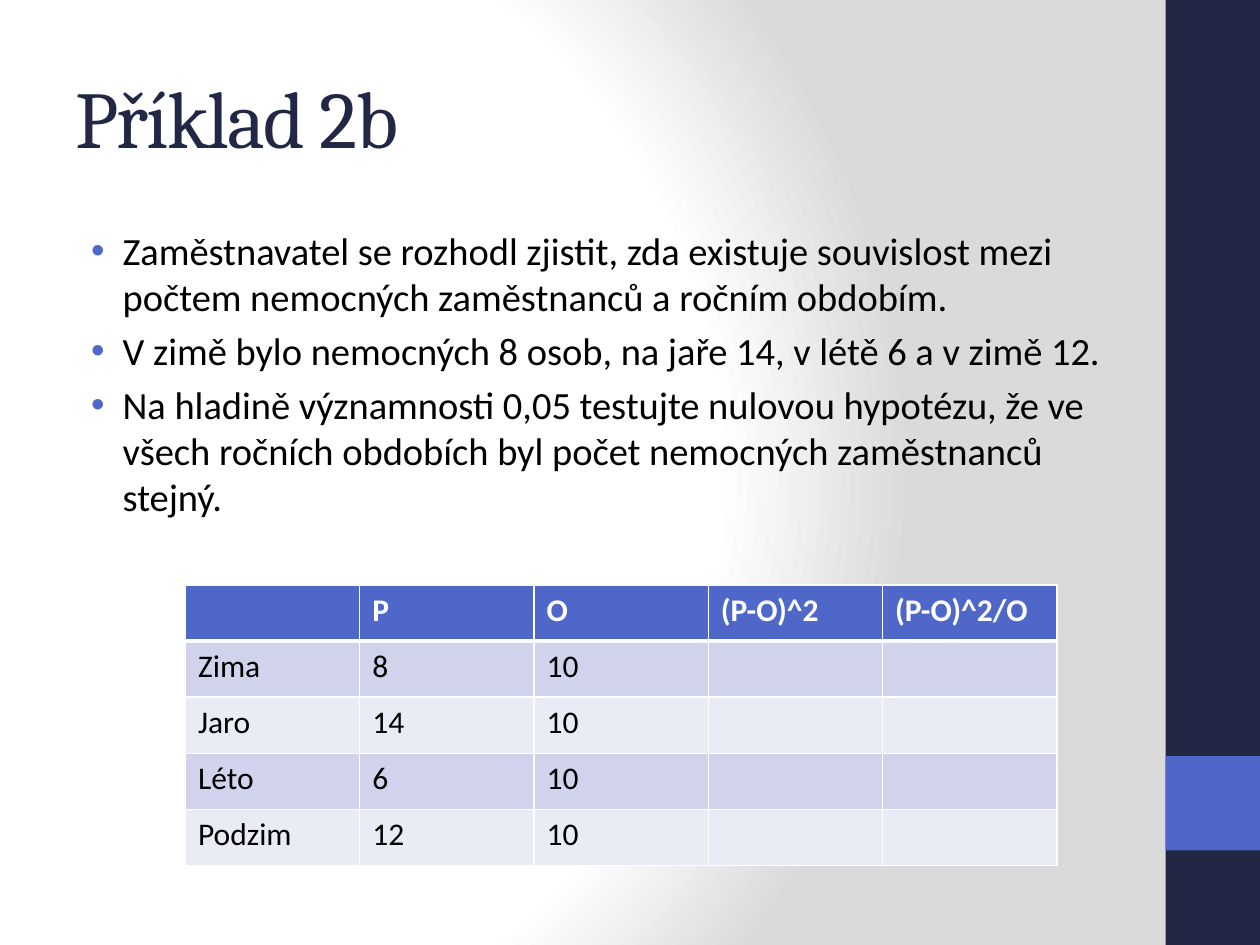
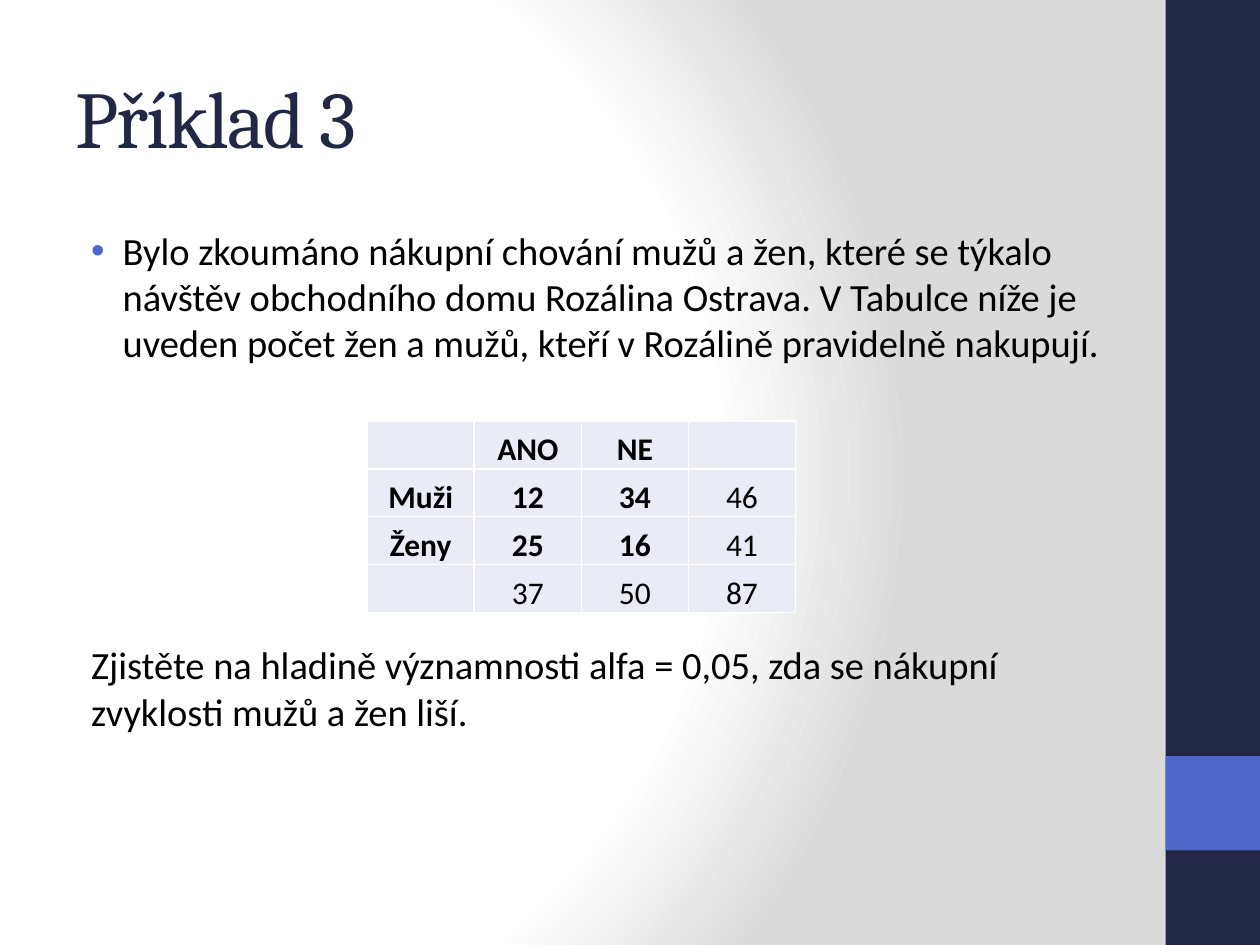
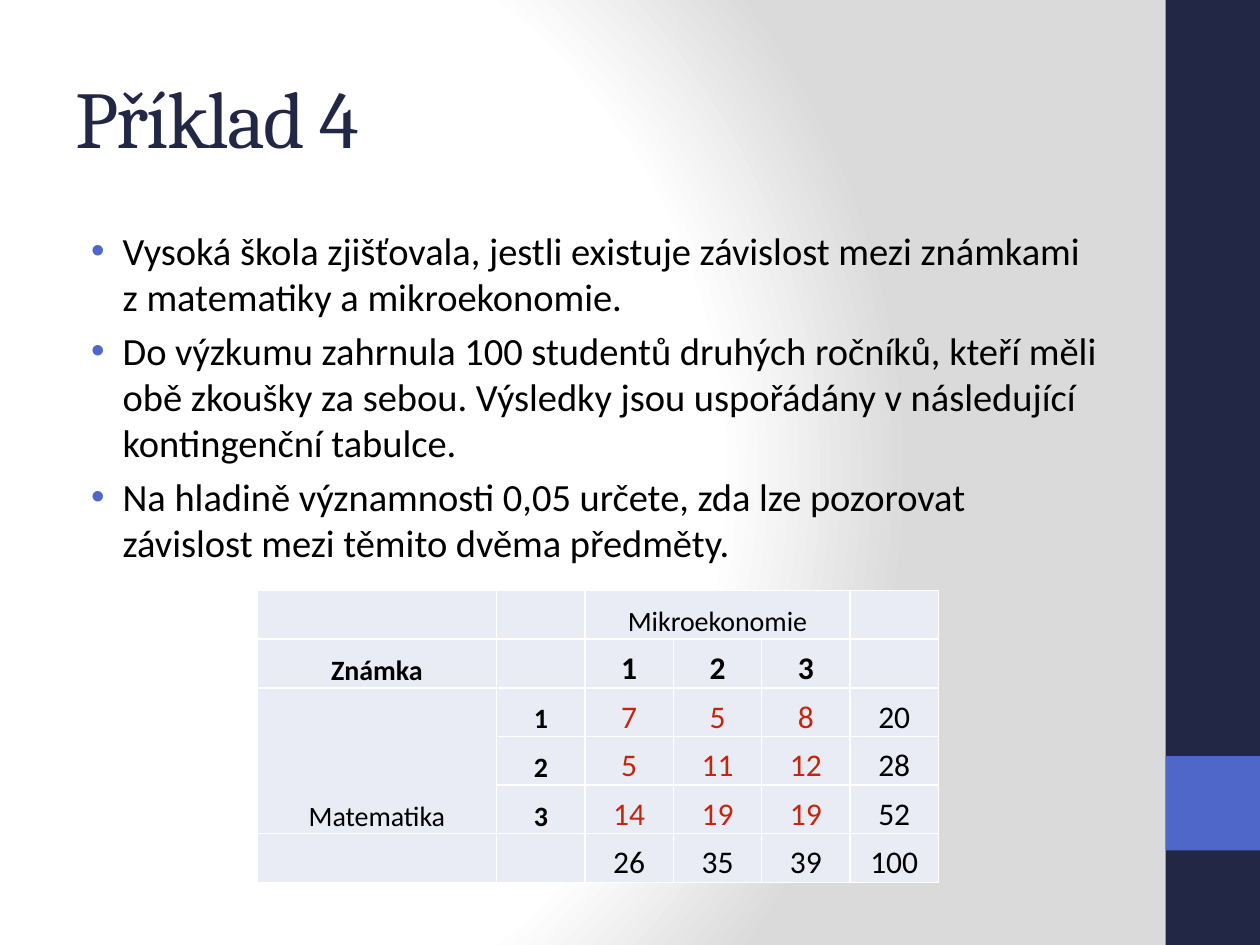
from dataclasses import dataclass

from pptx import Presentation
from pptx.dml.color import RGBColor
from pptx.enum.shapes import MSO_SHAPE
from pptx.enum.text import MSO_ANCHOR, PP_ALIGN
from pptx.oxml import parse_xml
from pptx.oxml.ns import nsdecls, qn
from pptx.util import Pt


@dataclass(frozen=True)
class Theme:
    navy: str = "212745"
    blue: str = "4E67C8"
    band: str = "D0D3EB"
    pale: str = "E9EBF5"
    grey: str = "DADADA"
    white: str = "FFFFFF"
    black: str = "000000"
    red: str = "C3260C"
    heading_font: str = "Cambria"
    body_font: str = "Calibri"
    title_size: float = 46
    body_size: float = 22
    cell_size: float = 18
    label_size: float = 16


THEME = Theme()


@dataclass(frozen=True)
class CellStyle:
    fill: str = THEME.pale
    color: str = THEME.black
    size: float = THEME.cell_size
    bold: bool = False
    compact: bool = True
    bottom_line: float = 1


def format_runs(p, font, size, color, bold=False):
    for r in p.runs:
        r.font.name = font
        r.font.size = Pt(size)
        r.font.bold = bold
        r.font.color.rgb = RGBColor.from_string(color)


def set_background(master):
    master.background.fill.solid()
    bg = master.element.find(".//" + qn("p:bgPr"))
    stops = [(0, THEME.white), (75, THEME.white), (100, THEME.grey)]
    gs = "".join(
        f'<a:gs pos="{pos * 1000}"><a:srgbClr val="{color}"/></a:gs>' for pos, color in stops
    )
    bg.replace(bg[0], parse_xml(
        f'<a:gradFill {nsdecls("a")} rotWithShape="1"><a:gsLst>{gs}</a:gsLst>'
        '<a:path path="circle">'
        '<a:fillToRect l="20000" t="50000" r="100000" b="50000"/>'
        '</a:path></a:gradFill>'
    ))


def add_band(slide, top, height, color):
    sp = slide.shapes.add_shape(MSO_SHAPE.RECTANGLE, Pt(666), Pt(top), Pt(54), Pt(height))
    sp.shadow.inherit = False
    sp.fill.solid()
    sp.fill.fore_color.rgb = RGBColor.from_string(color)
    sp.line.fill.background()


def add_text_frame(slide, top, height):
    tf = slide.shapes.add_textbox(Pt(36), Pt(top), Pt(600), Pt(height)).text_frame
    tf.word_wrap = True
    return tf


def add_slide(prs, title):
    slide = prs.slides.add_slide(prs.slide_layouts[6])
    add_band(slide, 0, 540, THEME.navy)
    add_band(slide, 432, 54, THEME.blue)
    tf = add_text_frame(slide, 21.6, 90)
    tf.vertical_anchor = MSO_ANCHOR.MIDDLE
    tf.text = title
    p = tf.paragraphs[0]
    format_runs(p, THEME.heading_font, THEME.title_size, THEME.navy)
    p.runs[0].font._element.set("spc", "-100")
    return slide


def set_indent(p, left, first=0):
    pPr = p._p.get_or_add_pPr()
    pPr.set("marL", str(Pt(left)))
    pPr.set("indent", str(Pt(first)))
    return pPr


def add_bullets(slide, texts):
    tf = add_text_frame(slide, 126, 378)
    for i, text in enumerate(texts):
        p = tf.add_paragraph() if i else tf.paragraphs[0]
        p.text = text
        pPr = set_indent(p, 27, -18)
        for xml in (
            f'<a:buClr {nsdecls("a")}><a:srgbClr val="{THEME.blue}"/></a:buClr>',
            f'<a:buFont {nsdecls("a")} typeface="Arial"/>',
            f'<a:buChar {nsdecls("a")} char="•"/>',
        ):
            pPr.append(parse_xml(xml))
        if i:
            p.space_before = Pt(THEME.body_size * 0.2)
        format_runs(p, THEME.body_font, THEME.body_size, THEME.black)


def add_closing(slide, top, text):
    tf = add_text_frame(slide, top, 72)
    tf.text = text
    p = tf.paragraphs[0]
    set_indent(p, 9)
    format_runs(p, THEME.body_font, THEME.body_size, THEME.black)


def set_borders(cell, bottom):
    tcPr = cell._tc.get_or_add_tcPr()
    for i, (side, width) in enumerate([("L", 1), ("R", 1), ("T", 1), ("B", bottom)]):
        tcPr.insert(i, parse_xml(
            f'<a:ln{side} {nsdecls("a")} w="{Pt(width)}"><a:solidFill>'
            f'<a:srgbClr val="{THEME.white}"/></a:solidFill></a:ln{side}>'
        ))


def format_cell(cell, text, style):
    cell.text = text
    p = cell.text_frame.paragraphs[0]
    if style.compact:
        cell.margin_left = cell.margin_right = cell.margin_top = Pt(0.7)
        cell.margin_bottom = Pt(0)
        cell.vertical_anchor = MSO_ANCHOR.BOTTOM
        p.alignment = PP_ALIGN.CENTER
    format_runs(p, THEME.body_font, style.size, style.color, style.bold)
    cell.fill.solid()
    cell.fill.fore_color.rgb = RGBColor.from_string(style.fill)
    set_borders(cell, style.bottom_line)


def add_grid(slide, left, top, widths, row_height, rows, style_at, merges=()):
    table = slide.shapes.add_table(
        len(rows), len(widths), Pt(left), Pt(top), Pt(sum(widths)), Pt(row_height * len(rows))
    ).table
    table.first_row = table.horz_banding = False
    for column, width in zip(table.columns, widths):
        column.width = Pt(width)
    for r, texts in enumerate(rows):
        table.rows[r].height = Pt(row_height)
        for c, text in enumerate(texts):
            format_cell(table.cell(r, c), text, style_at(r, c))
    for start, end in merges:
        table.cell(*start).merge(table.cell(*end))


def season_style(r, c):
    if r == 0:
        return CellStyle(THEME.blue, THEME.white, bold=True, compact=False, bottom_line=3)
    return CellStyle(THEME.band if r % 2 else THEME.pale, compact=False)


def shopping_style(r, c):
    return CellStyle(bold=r < 3 and c < 3)


def grades_style(r, c):
    is_count = 2 <= r <= 4 and 2 <= c <= 4
    return CellStyle(
        color=THEME.red if is_count else THEME.black,
        size=THEME.label_size if r == 0 or c < 2 else THEME.cell_size,
        bold=r == 1 or c == 1,
    )


def add_seasons_slide(prs):
    slide = add_slide(prs, "Příklad 2b")
    add_bullets(slide, [
        "Zaměstnavatel se rozhodl zjistit, zda existuje souvislost mezi počtem "
        "nemocných zaměstnanců a ročním obdobím.",
        "V zimě bylo nemocných 8 osob, na jaře 14, v létě 6 a v zimě 12.",
        "Na hladině významnosti 0,05 testujte nulovou hypotézu, že ve všech ročních "
        "obdobích byl počet nemocných zaměstnanců stejný.",
    ])
    add_grid(slide, 106, 334.2, [99.6] * 5, 32.1, [
        ["", "P", "O", "(P-O)^2", "(P-O)^2/O"],
        ["Zima", "8", "10", "", ""],
        ["Jaro", "14", "10", "", ""],
        ["Léto", "6", "10", "", ""],
        ["Podzim", "12", "10", "", ""],
    ], season_style)


def add_shopping_slide(prs):
    slide = add_slide(prs, "Příklad 3")
    add_bullets(slide, [
        "Bylo zkoumáno nákupní chování mužů a žen, které se týkalo návštěv obchodního "
        "domu Rozálina Ostrava. V Tabulce níže je uveden počet žen a mužů, kteří "
        "v Rozálině pravidelně nakupují.",
    ])
    add_grid(slide, 209.8, 240.5, [61.2] * 4, 27.4, [
        ["", "ANO", "NE", ""],
        ["Muži", "12", "34", "46"],
        ["Ženy", "25", "16", "41"],
        ["", "37", "50", "87"],
    ], shopping_style)
    add_closing(
        slide, 363,
        "Zjistěte na hladině významnosti alfa = 0,05, zda se nákupní zvyklosti mužů a žen liší.",
    )


def add_grades_slide(prs):
    slide = add_slide(prs, "Příklad 4")
    add_bullets(slide, [
        "Vysoká škola zjišťovala, jestli existuje závislost mezi známkami "
        "z matematiky a mikroekonomie.",
        "Do výzkumu zahrnula 100 studentů druhých ročníků, kteří měli obě zkoušky "
        "za sebou. Výsledky jsou uspořádány v následující kontingenční tabulce.",
        "Na hladině významnosti 0,05 určete, zda lze pozorovat závislost mezi těmito "
        "dvěma předměty.",
    ])
    add_grid(slide, 147, 337.5, [136.8] + [50.5] * 5, 27.8, [
        ["", "", "Mikroekonomie", "", "", ""],
        ["Známka", "", "1", "2", "3", ""],
        ["Matematika", "1", "7", "5", "8", "20"],
        ["", "2", "5", "11", "12", "28"],
        ["", "3", "14", "19", "19", "52"],
        ["", "", "26", "35", "39", "100"],
    ], grades_style, merges=[((0, 2), (0, 4)), ((2, 0), (4, 0))])


def main():
    prs = Presentation()
    prs.slide_width, prs.slide_height = Pt(720), Pt(540)
    set_background(prs.slide_master)
    add_seasons_slide(prs)
    add_shopping_slide(prs)
    add_grades_slide(prs)
    prs.save("out.pptx")


if __name__ == "__main__":
    main()
